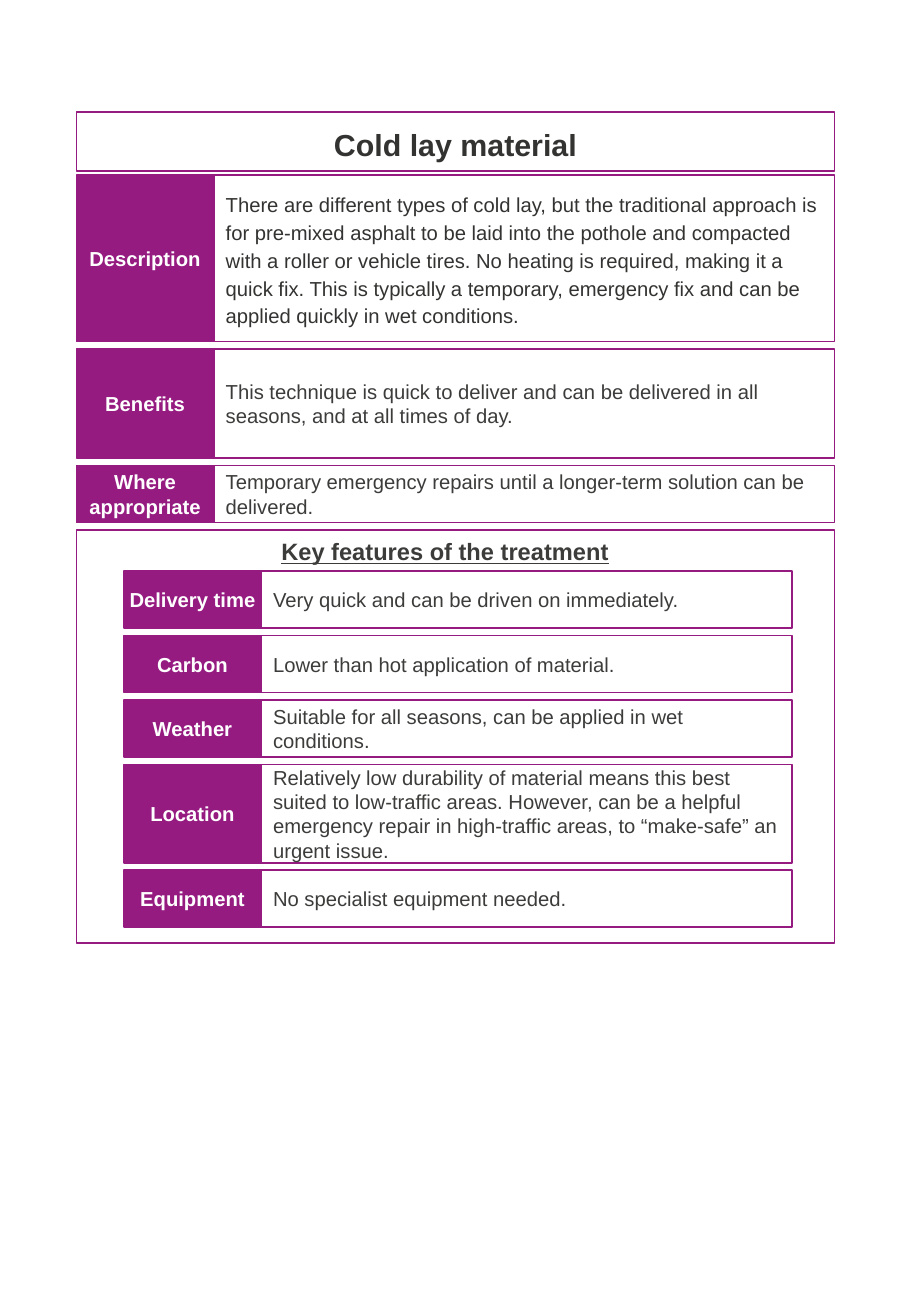
import pptx
import pptx.util
import pptx.dml.color
import pptx.enum.shapes
import pptx.enum.text

Inches = pptx.util.Inches
Pt = pptx.util.Pt
RGBColor = pptx.dml.color.RGBColor
ALIGN = pptx.enum.text.PP_ALIGN
ANCHOR = pptx.enum.text.MSO_ANCHOR

PURPLE = RGBColor(0x95, 0x1B, 0x81)
WHITE = RGBColor(0xFF, 0xFF, 0xFF)
DARK = RGBColor(0x33, 0x33, 0x32)
GREY = RGBColor(0x3C, 0x3C, 0x3B)

LEFT, WIDTH = 0.63, 6.24
LABEL_WIDTH = 1.13
GAP = 0.06
ROW_HEIGHT = 0.47
FEATURE_LEFT, FEATURE_WIDTH = 1.02, 5.5

TIGHT = (0.04, 0)
NORMAL = (0.1, 0.05)
LOOSE = {"line_spacing": 1.15, "space_after": Pt(8)}

SUMMARY = [
    ("Description", 1.37, "There are different types of cold lay, but the traditional approach is for pre-mixed asphalt to be laid into the pothole and compacted with a roller or vehicle tires. No heating is required, making it a quick fix. This is typically a temporary, emergency fix and can be applied quickly in wet conditions.",
     {"color": DARK, "insets": (0.1, 0), "para": LOOSE}),
    ("Benefits", 0.9, "This technique is quick to deliver and can be delivered in all seasons, and at all times of day.", {}),
    ("Where appropriate", ROW_HEIGHT, "Temporary emergency repairs until a longer-term solution can be delivered.", {}),
]
FEATURES = [
    ("Delivery time", ROW_HEIGHT, "Very quick and can be driven on immediately.", {}),
    ("Carbon", ROW_HEIGHT, "Lower than hot application of material.", {}),
    ("Weather", ROW_HEIGHT, "Suitable for all seasons, can be applied in wet conditions.", {}),
    ("Location", 0.81, "Relatively low durability of material means this best suited to low-traffic areas. However, can be a helpful emergency repair in high-traffic areas, to “make-safe” an urgent issue.", {}),
    ("Equipment", ROW_HEIGHT, "No specialist equipment needed.", {}),
]


def apply(obj, values):
    for name, value in values.items():
        setattr(obj, name, value)


class Sheet:
    font = "Arial"
    line_width = Pt(1)

    def __init__(self, prs):
        self.slide = prs.slides.add_slide(prs.slide_layouts[5])

    def outline(self, sp):
        sp.line.color.rgb = PURPLE
        sp.line.width = self.line_width

    def label(self, sp, text, size=12, color=GREY, insets=NORMAL, anchor=ANCHOR.MIDDLE, para=None, **font):
        tf = sp.text_frame
        side, edge = map(Inches, insets)
        apply(tf, {"word_wrap": True, "auto_size": pptx.enum.text.MSO_AUTO_SIZE.NONE,
                   "vertical_anchor": anchor, "margin_left": side, "margin_right": side,
                   "margin_top": edge, "margin_bottom": edge})
        p = tf.paragraphs[0]
        apply(p, {"alignment": ALIGN.LEFT, **(para or {})})
        r = p.add_run()
        r.text = text
        apply(r.font, {"name": self.font, "size": Pt(size), **font})
        r.font.color.rgb = color

    def title(self, text, x, y, w, h):
        sp = self.slide.shapes.title
        apply(sp, {"left": Inches(x), "top": Inches(y), "width": Inches(w), "height": Inches(h)})
        self.outline(sp)
        self.label(sp, text, size=18, color=DARK, insets=TIGHT, bold=True,
                   para={"alignment": ALIGN.CENTER, **LOOSE})

    def box(self, x, y, w, h, fill=None):
        sp = self.slide.shapes.add_shape(pptx.enum.shapes.MSO_SHAPE.RECTANGLE, *map(Inches, (x, y, w, h)))
        sp.shadow.inherit = False
        if fill is None:
            sp.fill.background()
        else:
            sp.fill.solid()
            sp.fill.fore_color.rgb = fill
        self.outline(sp)
        return sp

    def heading(self, text, x, y, w, h):
        sp = self.slide.shapes.add_textbox(*map(Inches, (x, y, w, h)))
        self.label(sp, text, size=14, insets=(0, 0), anchor=ANCHOR.TOP,
                   para={"alignment": ALIGN.CENTER}, bold=True, underline=True)

    def rows(self, rows, x, y, w):
        for name, h, text, style in rows:
            body = self.box(x + LABEL_WIDTH, y, w - LABEL_WIDTH, h)
            self.label(body, text, **style)
            tag = self.box(x, y, LABEL_WIDTH, h, PURPLE)
            self.label(tag, name, color=WHITE, insets=TIGHT, bold=True,
                       para={"alignment": ALIGN.CENTER})
            y += h + GAP
        return y


def main():
    prs = pptx.Presentation()
    prs.slide_width, prs.slide_height = Inches(7.5), Inches(10.83)
    s = Sheet(prs)
    s.title("Cold lay material", LEFT, 0.92, WIDTH, 0.49)
    panel_top = s.rows(SUMMARY, LEFT, 1.44, WIDTH)
    s.box(LEFT, panel_top, WIDTH, 3.4)
    s.heading("Key features of the treatment", 1.01, panel_top + GAP, 5.31, 0.24)
    s.rows(FEATURES, FEATURE_LEFT, 4.7, FEATURE_WIDTH)
    prs.save("out.pptx")


if __name__ == "__main__":
    main()
